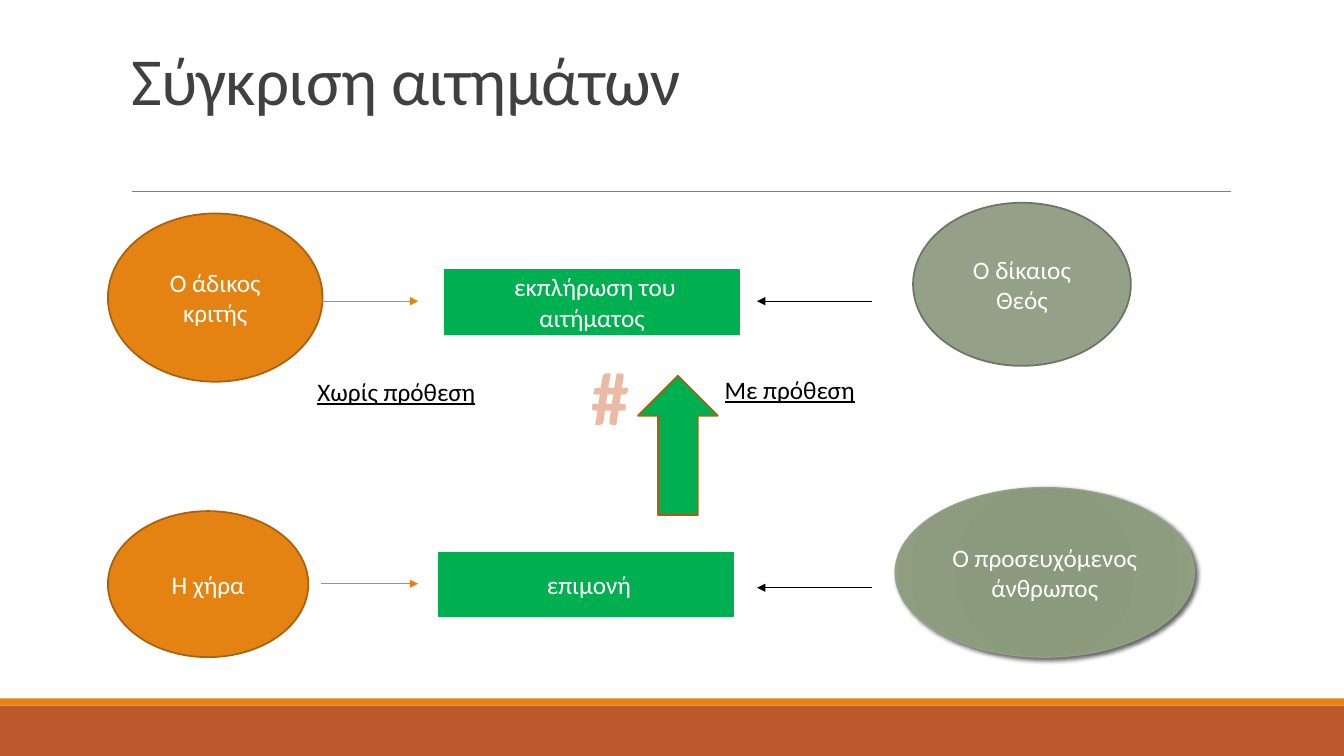
import pptx
import pptx.util
import pptx.dml.color
import pptx.enum.shapes
import pptx.enum.text
from lxml import etree

Cm, Pt = pptx.util.Cm, pptx.util.Pt
KIND = pptx.enum.shapes.MSO_SHAPE
ALIGN = pptx.enum.text.PP_ALIGN
ANCHOR = pptx.enum.text.MSO_ANCHOR
FIT = pptx.enum.text.MSO_AUTO_SIZE
NS = "http://schemas.openxmlformats.org/drawingml/2006/main"

HEX = {
    "orange": "E48312", "brown": "A9610D", "rust": "BD582C", "green": "00B050",
    "sage": "94A088", "moss": "6D7665", "peach": "EABAA5", "white": "FFFFFF",
    "black": "000000", "gray": "808080", "dark": "404040",
}
WIDE, HIGH = 33.87, 19.05
FONT = "Calibri"
BODY = {"name": FONT, "size": Pt(18)}

TITLE = ("Σύγκριση αιτημάτων", (3.05, 0.2, 17.6, 2.92))

# kind, box in cm, fill, line, text
SHAPES = [
    (KIND.RECTANGLE, (0, 17.78, WIDE, 1.27), "rust", None, ""),
    (KIND.RECTANGLE, (0, 17.6, WIDE, 0.18), "orange", None, ""),
    (KIND.OVAL, (2.72, 5.38, 5.41, 4.24), "orange", "brown", "Ο άδικος κριτής"),
    (KIND.RECTANGLE, (11.2, 6.81, 7.44, 1.6), "green", "green", " εκπλήρωση του αιτήματος"),
    (KIND.OVAL, (2.72, 12.88, 5.05, 3.68), "orange", "brown", "Η χήρα"),
    (KIND.OVAL, (23.01, 5.11, 5.49, 4.11), "sage", "moss", "Ο δίκαιος Θεός"),
    (KIND.RECTANGLE, (11.05, 13.92, 7.44, 1.6), "green", "green", " επιμονή"),
]
PRAYER = (KIND.OVAL, (22.56, 12.29, 7.54, 4.27), "sage", "sage", "Ο προσευχόμενος άνθρωπος")
RISE = (KIND.UP_ARROW, (16.08, 9.47, 2.01, 3.51), "green", "brown", "")

# start x, end x, y, colour, width, arrowhead
LINES = [
    (3.33, 31.01, 4.83, "gray", 0.5, False),
    (8.1, 10.54, 14.71, "orange", 1, True),
    (8.1, 10.54, 7.59, "orange", 1, True),
    (21.97, 19.08, 14.81, "black", 1, True),
    (21.97, 19.08, 7.59, "black", 1, True),
]

LABELS = [
    ("Χωρίς πρόθεση", (7.75, 9.35, 4.55, 1.02)),
    ("Με πρόθεση", (18.01, 9.3, 3.84, 1.02)),
]
HASH = ("#", (9.91, 8.69, 10.92, 2.57))

GLOW = f"""<a:gradFill xmlns:a="{NS}" rotWithShape="1"><a:gsLst>
<a:gs pos="0"><a:srgbClr val="8A987B"/></a:gs>
<a:gs pos="34000"><a:srgbClr val="8B997D"/></a:gs>
<a:gs pos="70000"><a:srgbClr val="8D9C7E"/></a:gs>
<a:gs pos="100000"><a:srgbClr val="94A187"/></a:gs></a:gsLst>
<a:path path="circle"><a:fillToRect l="100000" t="100000" r="100000" b="100000"/></a:path>
</a:gradFill>"""
SHADE = f"""<a:outerShdw xmlns:a="{NS}" blurRad="38100" dist="25400" dir="2700000"
algn="br" rotWithShape="0"><a:srgbClr val="000000"><a:alpha val="60000"/></a:srgbClr>
</a:outerShdw>"""
EDGE = f"""<a:ln xmlns:a="{NS}" w="22225"><a:solidFill><a:srgbClr val="{HEX['rust']}"/>
</a:solidFill></a:ln>"""


def tint(name):
    return pptx.dml.color.RGBColor.from_string(HEX[name])


def place(box):
    return [Cm(v) for v in box]


def style(font, color, form):
    for key, value in form.items():
        setattr(font, key, value)
    font.color.rgb = tint(color)


def add_form(slide, kind, box, fill, line, text):
    shape = slide.shapes.add_shape(kind, *place(box))
    shape.shadow.inherit = False
    shape.fill.solid()
    shape.fill.fore_color.rgb = tint(fill)
    if line:
        shape.line.color.rgb = tint(line)
        shape.line.width = Pt(1.25)
    else:
        shape.line.fill.background()
    if text:
        frame = shape.text_frame
        frame.text = text
        frame.vertical_anchor = ANCHOR.MIDDLE
        para = frame.paragraphs[0]
        para.alignment = ALIGN.CENTER
        style(para.runs[0].font, "white", BODY)
    return shape


def add_line(slide, start, end, y, color, width, head):
    line = slide.shapes.add_connector(
        pptx.enum.shapes.MSO_CONNECTOR.STRAIGHT, Cm(start), Cm(y), Cm(end), Cm(y))
    line.line.color.rgb = tint(color)
    line.line.width = Pt(width)
    if head:
        etree.SubElement(line.line._get_or_add_ln(), f"{{{NS}}}tailEnd", type="triangle")
    etree.SubElement(line._element.spPr, f"{{{NS}}}effectLst")


def add_label(slide, text, box, color, form, wrap=False):
    frame = slide.shapes.add_textbox(*place(box)).text_frame
    frame.text = text
    frame.word_wrap = wrap
    frame.auto_size = FIT.SHAPE_TO_FIT_TEXT
    para = frame.paragraphs[0]
    style(para.runs[0].font, color, form)
    return para


def set_title(slide, text, box):
    title = slide.shapes.title
    title.left, title.top, title.width, title.height = place(box)
    frame = title.text_frame
    frame.text = text
    frame.vertical_anchor = ANCHOR.BOTTOM
    para = frame.paragraphs[0]
    para.alignment = ALIGN.LEFT
    para.line_spacing = 0.85
    style(para.runs[0].font, "dark", {"name": FONT, "size": Pt(48)})
    para.runs[0].font._element.set("spc", "-50")


def main():
    deck = pptx.Presentation()
    deck.slide_width, deck.slide_height = Cm(WIDE), Cm(HIGH)
    slide = deck.slides.add_slide(deck.slide_layouts[5])
    set_title(slide, *TITLE)
    for item in SHAPES:
        add_form(slide, *item)

    prayer = add_form(slide, *PRAYER)
    prayer.line.width = Pt(1)
    props = prayer._element.spPr
    props.replace(props.find(f"{{{NS}}}solidFill"), etree.fromstring(GLOW))
    props.find(f"{{{NS}}}effectLst").append(etree.fromstring(SHADE))

    for item in LINES:
        add_line(slide, *item)
    for text, box in LABELS:
        add_label(slide, text, box, "black", {**BODY, "underline": True})
    form = {"name": FONT, "size": Pt(54), "bold": True}
    para = add_label(slide, *HASH, "peach", form, wrap=True)
    para.alignment = ALIGN.CENTER
    para.runs[0].font._element.insert(0, etree.fromstring(EDGE))
    add_form(slide, *RISE)
    deck.save("out.pptx")


if __name__ == "__main__":
    main()
